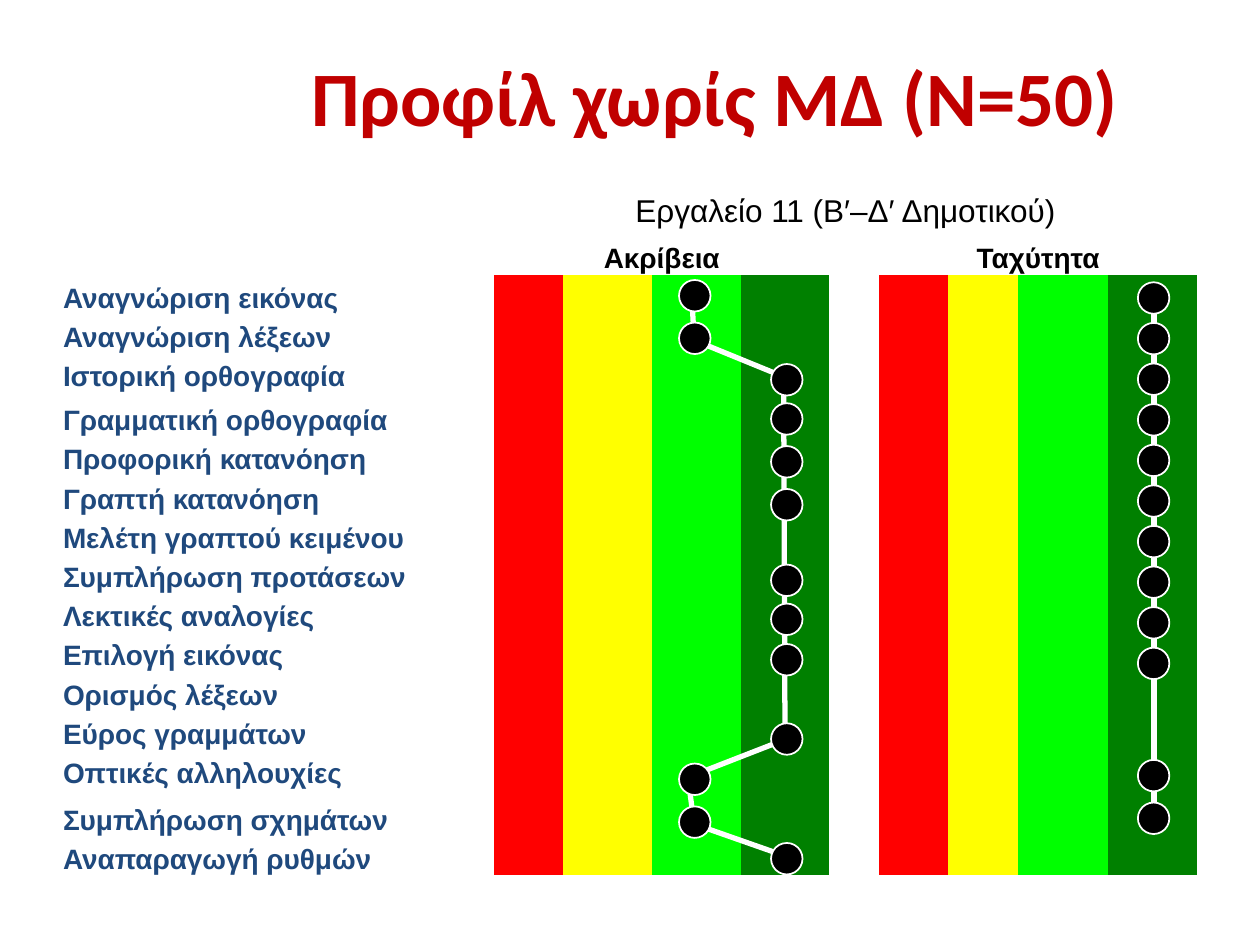
from lxml.etree import SubElement
from pptx import Presentation
from pptx.dml.color import RGBColor
from pptx.enum.shapes import MSO_CONNECTOR, MSO_SHAPE
from pptx.enum.text import MSO_ANCHOR, PP_ALIGN
from pptx.oxml.ns import qn
from pptx.util import Pt

NO_STYLE = "{2D5ABB26-0587-4C30-8999-92F81FD0307C}"
BANDS = ["FF0000", "FFFF00", "00FF00", "008000"]
COLUMNS = [246.4, 39.6, 50.8, 50.8, 50.4, 28.6, 39.4, 40, 51, 51]
ACCURACY_COL, SPEED_COL = 1, 6
HEADER_ROWS = [29, 22.3]
ROW_H, TALL_ROWS = 22.4, {3: 25.3, 13: 26.8}
TASKS = [
    "Αναγνώριση εικόνας", "Αναγνώριση λέξεων", "Ιστορική ορθογραφία",
    "Γραμματική ορθογραφία", "Προφορική κατανόηση", "Γραπτή κατανόηση",
    "Μελέτη γραπτού κειμένου", "Συμπλήρωση προτάσεων", "Λεκτικές αναλογίες",
    "Επιλογή εικόνας", "Ορισμός λέξεων", "Εύρος γραμμάτων",
    "Οπτικές αλληλουχίες", "Συμπλήρωση σχημάτων", "Αναπαραγωγή ρυθμών",
]
DOT = 18
GREEN_X, DARK_X, SPEED_X = 388, 440.6, 650.2
ACCURACY_LINE = [(395.3, 169.2), (396.7, 194.4), (447.8, 215.3), (448.6, 422.6),
                 (393.1, 444.2), (396.7, 470.9), (450, 489.6)]
ACCURACY_DOTS = (
    [(GREEN_X, y) for y in (160, 184.3, 436.3, 460.8)]
    + [(DARK_X, y) for y in (208, 230.4, 254.9, 279.4, 322.6, 344.9, 368, 413.3, 481.7)]
)
SPEED_LINE = [(659.5, 169.2), (659.5, 469.4)]
SPEED_DOTS = [(SPEED_X, y) for y in [161.3 + 23.2 * i for i in range(10)] + [434.2, 458.6]]


def rgb(color):
    """Turn a hex string into a colour."""
    return RGBColor.from_string(color)


def write(tf, text, size=16, color="000000", bold=True, font="Arial",
          align=PP_ALIGN.LEFT, hanging=0):
    """Put one formatted run of text into a text frame."""
    p = tf.paragraphs[0]
    p.alignment = align
    if hanging:
        pPr = p._p.get_or_add_pPr()
        pPr.set("marL", str(Pt(hanging)))
        pPr.set("indent", str(-Pt(hanging)))
    r = p.add_run()
    r.text = text
    r.font.size, r.font.bold, r.font.name = Pt(size), bold, font
    r.font.color.rgb = rgb(color)


def add_title(s, text):
    """Place and format the slide title."""
    sp = s.shapes.title
    sp.left, sp.top, sp.width, sp.height = Pt(133.2), Pt(9.4), Pt(550.8), Pt(90)
    sp.text_frame.vertical_anchor = MSO_ANCHOR.MIDDLE
    write(sp.text_frame, text, size=44, color="C00000", font="Calibri",
          align=PP_ALIGN.CENTER)


def add_grid(s):
    """Add an unstyled table with the row and column sizes of the profile."""
    heights = HEADER_ROWS + [TALL_ROWS.get(i, ROW_H) for i in range(len(TASKS))]
    table = s.shapes.add_table(len(heights), len(COLUMNS), Pt(36), Pt(105.8),
                               Pt(sum(COLUMNS)), Pt(sum(heights))).table
    table.first_row = table.horz_banding = False
    table._tbl.tblPr.find(qn("a:tableStyleId")).text = NO_STYLE
    for col, width in zip(table.columns, COLUMNS):
        col.width = Pt(width)
    for row, height in zip(table.rows, heights):
        row.height = Pt(height)
    for cell in table.iter_cells():
        cell.margin_left = cell.margin_right = cell.margin_top = cell.margin_bottom = 0
        cell.vertical_anchor = MSO_ANCHOR.BOTTOM
        cell.fill.background()
    return table


def add_heading(table, row, col, last, text, **fmt):
    """Merge cells of one row and write a centred heading."""
    cell = table.cell(row, col)
    cell.merge(table.cell(row, last))
    write(cell.text_frame, text, align=PP_ALIGN.CENTER, hanging=27, **fmt)
    return cell


def add_profile_table(s):
    """Add the headings, the task names and the colour bands."""
    table = add_grid(s)
    tool = add_heading(table, 0, 1, len(COLUMNS) - 1, "Εργαλείο 11 (Β′–Δ′ Δημοτικού)",
                       size=18, bold=False)
    tool.margin_top = tool.margin_bottom = Pt(4)
    for col, text in ((ACCURACY_COL, "Ακρίβεια"), (SPEED_COL, "Ταχύτητα")):
        add_heading(table, 1, col, col + len(BANDS) - 1, text)
    for row, task in enumerate(TASKS, len(HEADER_ROWS)):
        write(table.cell(row, 0).text_frame, task, color="1F497D", hanging=27)
        for start in (ACCURACY_COL, SPEED_COL):
            for col, color in enumerate(BANDS, start):
                fill = table.cell(row, col).fill
                fill.solid()
                fill.fore_color.rgb = rgb(color)


def add_path(shapes, points):
    """Join consecutive points with white lines."""
    for (x1, y1), (x2, y2) in zip(points, points[1:]):
        c = shapes.add_connector(MSO_CONNECTOR.STRAIGHT, Pt(x1), Pt(y1), Pt(x2), Pt(y2))
        c.line.color.rgb = rgb("FFFFFF")
        c.line.width = Pt(3)
        SubElement(c._element.spPr, qn("a:effectLst"))


def add_dots(shapes, corners):
    """Add a black dot with a white rim at each top left corner."""
    for x, y in corners:
        sp = shapes.add_shape(MSO_SHAPE.OVAL, Pt(x), Pt(y), Pt(DOT), Pt(DOT))
        sp.shadow.inherit = False
        sp.fill.solid()
        sp.fill.fore_color.rgb = rgb("000000")
        sp.line.color.rgb = rgb("FFFFFF")
        sp.line.width = Pt(1)


def main():
    """Build the slide and save it."""
    prs = Presentation()
    prs.slide_width, prs.slide_height = Pt(720), Pt(540)
    s = prs.slides.add_slide(prs.slide_layouts[5])
    add_title(s, "Προφίλ χωρίς ΜΔ (Ν=50)")
    add_profile_table(s)
    add_path(s.shapes.add_group_shape().shapes, ACCURACY_LINE)
    add_path(s.shapes, SPEED_LINE)
    for dots in (SPEED_DOTS, ACCURACY_DOTS):
        add_dots(s.shapes.add_group_shape().shapes, dots)
    prs.save("out.pptx")


if __name__ == "__main__":
    main()
